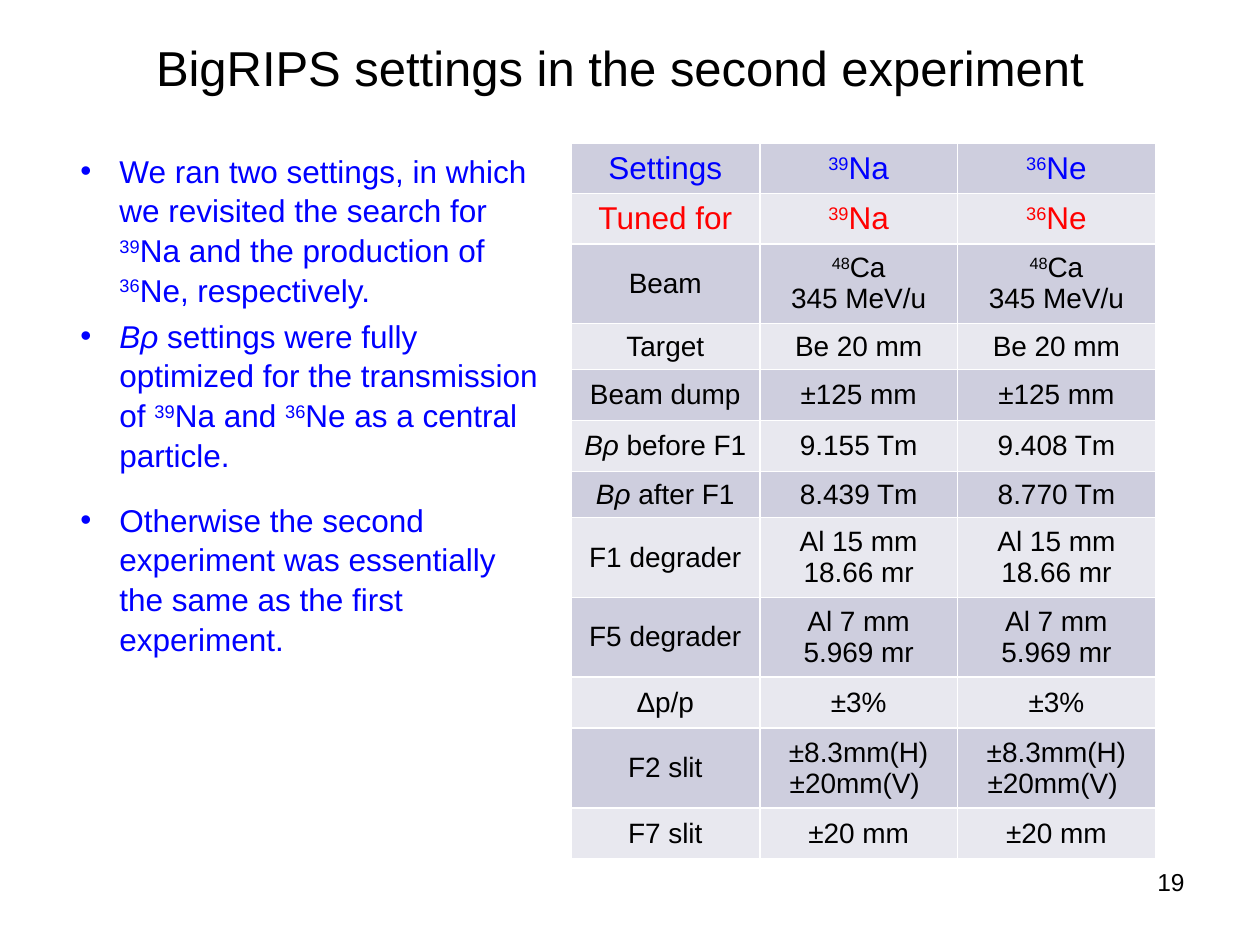
from dataclasses import dataclass
from typing import NamedTuple

from lxml import etree
from pptx import Presentation
from pptx.dml.color import RGBColor
from pptx.enum.text import MSO_ANCHOR, PP_ALIGN
from pptx.oxml.ns import qn
from pptx.util import Emu, Inches, Pt

LEFT, CENTER, RIGHT = PP_ALIGN.LEFT, PP_ALIGN.CENTER, PP_ALIGN.RIGHT
MIDDLE = MSO_ANCHOR.MIDDLE
SLIDE_W, SLIDE_H = Inches(10), Inches(7.5)
FONT = "Arial"
COLORS = {
    "ink": "000000",
    "blue": "0000FF",
    "red": "FF0000",
    "border": "FFFFFF",
    "dark band": "CECEDE",
    "light band": "E8E8EF",
}


class Run(NamedTuple):
    text: str
    italic: bool = False
    raised: bool = False


class Style(NamedTuple):
    size: int
    color: str
    align: PP_ALIGN = LEFT


Line = list[Run]


@dataclass
class Box:
    """A text block; lengths are percentages of the slide's size."""
    left: float
    top: float
    width: float
    height: float
    line: Line
    style: Style
    bullet: bool = False


@dataclass
class Setting:
    """A table row: label, one list of lines per setting, percent height."""
    label: Line
    values: list[list[Line]]
    height: float
    style: Style = Style(16, "ink", CENTER)


def across(percent: float) -> Emu:
    return Emu(round(SLIDE_W * percent / 100))


def down(percent: float) -> Emu:
    return Emu(round(SLIDE_H * percent / 100))


def isotope(mass: str, rest: str) -> Line:
    return [Run(mass, raised=True), Run(rest)]


def rigidity(rest: str) -> Line:
    return [Run("Bρ", italic=True), Run(rest)]


def both(*texts: str) -> list[list[Line]]:
    """The same lines for both settings."""
    return [[[Run(text)] for text in texts]] * 2


def write_line(paragraph, line: Line, style: Style) -> None:
    paragraph.alignment = style.align
    for part in line:
        run = paragraph.add_run()
        run.text = part.text
        run.font.name = FONT
        run.font.size = Pt(style.size)
        run.font.italic = part.italic
        run.font.color.rgb = RGBColor.from_string(COLORS[style.color])
        if part.raised:
            run.font._element.set("baseline", "30000")


def add_bullet(paragraph) -> None:
    paragraph.line_spacing = 1.05
    props = paragraph._p.get_or_add_pPr()
    props.set("marL", str(Inches(0.31)))
    props.set("indent", str(-Inches(0.31)))
    etree.SubElement(props, qn("a:buFont"), typeface=FONT)
    etree.SubElement(props, qn("a:buChar"), char="•")


def draw_box(slide, box: Box) -> None:
    frame = slide.shapes.add_textbox(
        across(box.left), down(box.top), across(box.width), down(box.height)
    ).text_frame
    frame.word_wrap = True
    write_line(frame.paragraphs[0], box.line, box.style)
    if box.bullet:
        add_bullet(frame.paragraphs[0])


def border_cell(cell) -> None:
    props = cell._tc.get_or_add_tcPr()
    for position, side in enumerate(("lnL", "lnR", "lnT", "lnB")):
        edge = etree.Element(qn(f"a:{side}"), w=str(Pt(1)))
        fill = etree.SubElement(edge, qn("a:solidFill"))
        etree.SubElement(fill, qn("a:srgbClr"), val=COLORS["border"])
        props.insert(position, edge)


def fill_cell(cell, lines: list[Line], style: Style, band: str) -> None:
    cell.vertical_anchor = MIDDLE
    cell.fill.solid()
    cell.fill.fore_color.rgb = RGBColor.from_string(COLORS[band])
    border_cell(cell)
    frame = cell.text_frame
    for index, line in enumerate(lines):
        paragraph = frame.add_paragraph() if index else frame.paragraphs[0]
        write_line(paragraph, line, style)


def draw_settings(slide, left: float, top: float, widths: list[float],
                  settings: list[Setting]) -> None:
    table = slide.shapes.add_table(
        len(settings), len(widths), across(left), down(top),
        across(sum(widths)), down(sum(s.height for s in settings)),
    ).table
    table.first_row = table.horz_banding = False
    for column, width in zip(table.columns, widths):
        column.width = across(width)
    for index, setting in enumerate(settings):
        table.rows[index].height = down(setting.height)
        band = "light band" if index % 2 else "dark band"
        for column, lines in enumerate([[setting.label], *setting.values]):
            fill_cell(table.cell(index, column), lines, setting.style, band)


# Row heights, percent of the slide's height
HEAD, TALL, SLIM, NORMAL = 5.3, 8.45, 4.87, 5.4
NUCLEI = [[isotope("39", "Na")], [isotope("36", "Ne")]]
SETTINGS = [
    Setting([Run("Settings")], NUCLEI, HEAD, Style(18, "blue", CENTER)),
    Setting([Run("Tuned for")], NUCLEI, HEAD, Style(18, "red", CENTER)),
    Setting([Run("Beam")], [[isotope("48", "Ca"), [Run("345 MeV/u")]]] * 2, TALL),
    Setting([Run("Target")], both("Be 20 mm"), SLIM),
    Setting([Run("Beam dump")], both("±125 mm"), NORMAL),
    Setting(rigidity(" before F1"), [[[Run("9.155 Tm")]], [[Run("9.408 Tm")]]], NORMAL),
    Setting(rigidity(" after F1"), [[[Run("8.439 Tm")]], [[Run("8.770 Tm")]]], SLIM),
    Setting([Run("F1 degrader")], both("Al 15 mm", "18.66 mr"), TALL),
    Setting([Run("F5 degrader")], both("Al 7 mm", "5.969 mr"), TALL),
    Setting([Run("Δp/p")], both("±3%"), NORMAL),
    Setting([Run("F2 slit")], both("±8.3mm(H)", "±20mm(V) "), TALL),
    Setting([Run("F7 slit")], both("±20 mm"), NORMAL),
]

REMARK = Style(18, "blue")
BOXES = [
    # Title
    Box(11.4, 3.33, 79.7, 7.6,
        [Run("BigRIPS settings in the second experiment")], Style(28, "ink")),
    # Remarks
    Box(5.4, 15.2, 38.6, 17.47,
        [Run("We ran two settings, in which we revisited the search for "),
         *isotope("39", "Na and the production of "),
         *isotope("36", "Ne, respectively.")], REMARK, bullet=True),
    Box(5.4, 32.67, 38.6, 17.47,
        [*rigidity(" settings were fully optimized for the transmission of "),
         *isotope("39", "Na and "),
         *isotope("36", "Ne as a central particle.")], REMARK, bullet=True),
    Box(5.4, 52.13, 37, 17.47,
        [Run("Otherwise the second experiment was essentially the same as "
             "the first experiment.")], REMARK, bullet=True),
    # Page number
    Box(71.7, 91.07, 23.3, 6.93, [Run("19")], Style(14, "ink", RIGHT)),
]


def main() -> None:
    deck = Presentation()
    deck.slide_width, deck.slide_height = SLIDE_W, SLIDE_H
    slide = deck.slides.add_slide(deck.slide_layouts[6])
    draw_settings(slide, 45.3, 15.2, [15, 15.7, 15.7], SETTINGS)
    for box in BOXES:
        draw_box(slide, box)
    deck.save("out.pptx")


if __name__ == "__main__":
    main()
